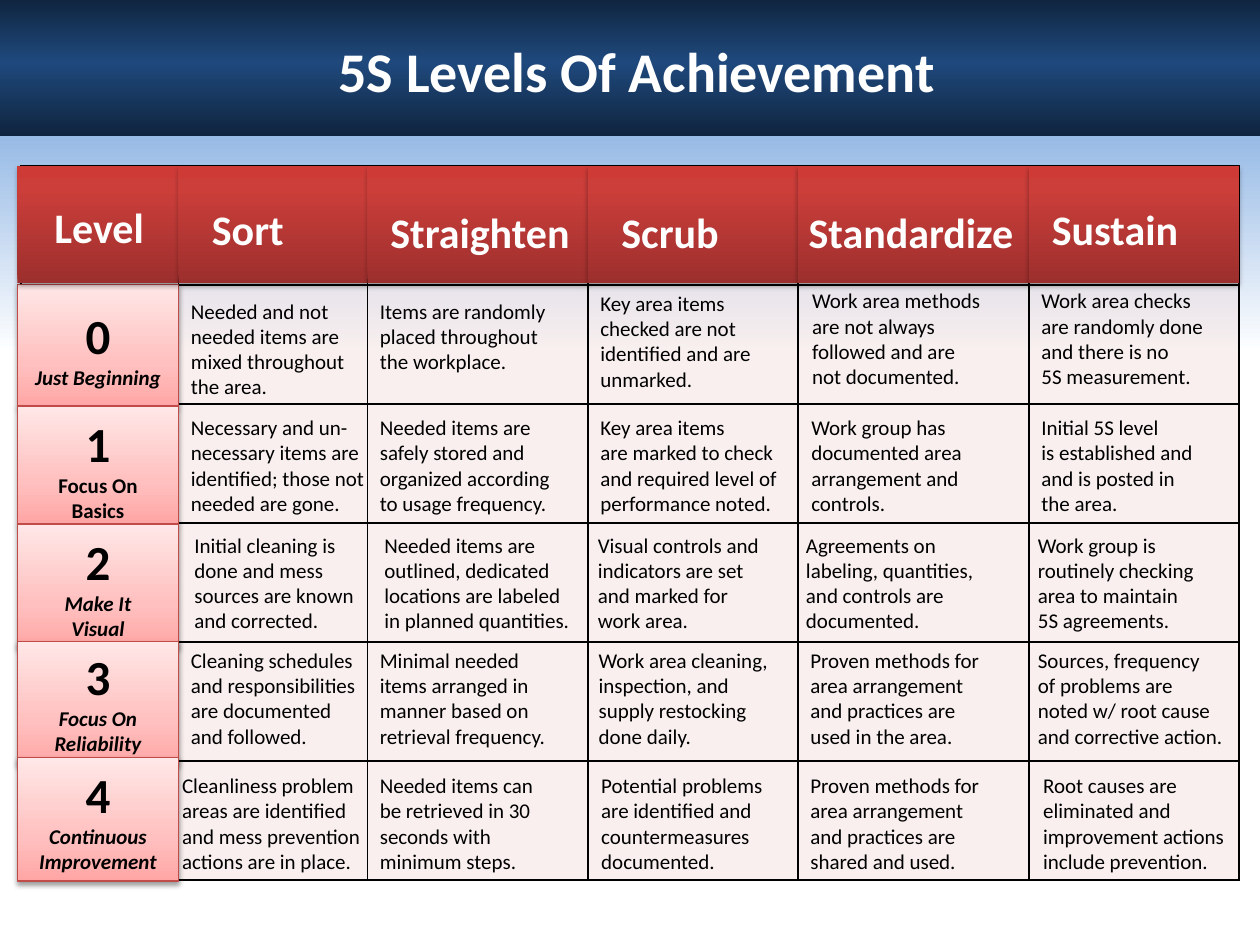
from itertools import accumulate
from lxml.etree import SubElement
from pptx import Presentation
from pptx.dml.color import RGBColor
from pptx.enum.shapes import MSO_SHAPE
from pptx.enum.text import MSO_ANCHOR, MSO_AUTO_SIZE, PP_ALIGN
from pptx.oxml import parse_xml
from pptx.oxml.ns import nsdecls, qn
from pptx.util import Pt

FONT = "Calibri"
COLS = [90, 108, 126, 120, 132, 120]
ROW = 68
EDGES = [0, *accumulate(COLS)]
RED = [(0, "9C2F2D"), (80, "CB3E3A"), (100, "CE3B37")]
PINK = [(0, "FFA6A5"), (35, "FFC0BF"), (100, "FFE7E7")]
SKY = [(0, "8EB4E3"), (29, "FFFFFF"), (100, "FFFFFF")]
NAVY = [(0, "0F243E"), (46, "1F497D"), (100, "0F243E")]

# Heading: text, left and top within its column, width
HEADS = [
    ("Level", 12, 16.5, 66), ("Sort", 12, 18, 56),
    ("Straighten", 6, 19.5, 118), ("Scrub", 12, 19.5, 70.5),
    ("Standardize", -1, 19.5, 133), ("Sustain", 6, 18, 88),
]
# Level: caption, italic, tile top and height, label shift
LEVELS = [
    ("Just Beginning", True, 67.5, 70, 8.5),
    ("Focus On\nBasics", False, 137, 67, 1),
    ("Make It\nVisual", True, 204.5, 70.5, 0.5),
    ("Focus On\nReliability", True, 271.5, 70.5, -0.5),
    ("Continuous\nImprovement", True, 338, 70.5, 0.5),
]
# Note: text, left and top shift, width
NOTES = [
    [("Needed and not\nneeded items are\nmixed throughout\nthe area.", 0, 0, 106.5),
     ("Items are randomly\nplaced throughout\nthe workplace.", 0, 0, 116.5),
     ("Key area items\nchecked are not\nidentified and are\nunmarked.", 0, -4.5, 106),
     ("Work area methods\nare not always\nfollowed and are\nnot documented.", 1, -6, 119),
     ("Work area checks\nare randomly done\nand there is no\n5S measurement.", 0, -6, 114.5)],
    [("Necessary and un-\nnecessary items are\nidentified; those not\nneeded are gone.", 0, 0, 121.5),
     ("Needed items are\nsafely stored and\norganized according\nto usage frequency.", 0, 0, 121.5),
     ("Key area items\nare marked to check\nand required level of\nperformance noted.", 0, 0, 123),
     ("Work group has\ndocumented area\narrangement and\ncontrols.", 0.5, 0, 107),
     ("Initial 5S level\nis established and\nand is posted in\nthe area.", 0, 0, 110)],
    [("Initial cleaning is\ndone and mess\nsources are known\nand corrected.", 2, 0, 115),
     ("Needed items are\noutlined, dedicated\nlocations are labeled\nin planned quantities.", 2.5, 0, 127.5),
     ("Visual controls and\nindicators are set\nand marked for\nwork area.", -1.5, 0, 115),
     ("Agreements on\nlabeling, quantities,\nand controls are\ndocumented.", -2.5, 0, 116.5),
     ("Work group is\nroutinely checking\narea to maintain\n5S agreements.", -2, 0, 110)],
    [("Cleaning schedules\nand responsibilities\nare documented\nand followed.", 0, 0, 119),
     ("Minimal needed\nitems arranged in\nmanner based on\nretrieval frequency.", 0, 0, 116),
     ("Work area cleaning,\ninspection, and\nsupply restocking\ndone daily.", -1, 0, 121),
     ("Proven methods for\narea arrangement\nand practices are\nused in the area.", 0, 0, 119),
     ("Sources, frequency\nof problems are\nnoted w/ root cause\nand corrective action.", -2, 0, 128)],
    [("Cleanliness problem\nareas are identified\nand mess prevention\nactions are in place.", -5, 0, 119),
     ("Needed items can\nbe retrieved in 30\nseconds with\nminimum steps.", 0, 0, 111),
     ("Potential problems\nare identified and\ncountermeasures\ndocumented.", 0.5, 0, 114),
     ("Proven methods for\narea arrangement\nand practices are\nshared and used.", 0, 0, 119),
     ("Root causes are\neliminated and\nimprovement actions\ninclude prevention.", 1, 0, 124.5)],
]
NOTE_TOPS = [72, 138.5, 205.5, 271.5, 343]


def tint(color, code):
    color.rgb = RGBColor.from_string(code)


def panel(slide, x, y, w, h, stops, angle, line=None, shade=0):
    """Add a gradient rectangle; shade is the shadow's opacity in percent."""
    box = slide.shapes.add_shape(MSO_SHAPE.RECTANGLE, Pt(x), Pt(y), Pt(w), Pt(h))
    marks = "".join(f'<a:gs pos="{pos * 1000}"><a:srgbClr val="{code}"/></a:gs>'
                    for pos, code in stops)
    props = box.element.spPr
    props.append(parse_xml(
        f'<a:gradFill {nsdecls("a")} rotWithShape="1"><a:gsLst>{marks}</a:gsLst>'
        f'<a:lin ang="{angle * 60000}" scaled="0"/></a:gradFill>'))
    if line:
        tint(box.line.color, line)
        box.line.width = Pt(0.75)
    else:
        box.line.fill.background()
    box.shadow.inherit = False
    if shade:
        props.find(qn("a:effectLst")).append(parse_xml(
            f'<a:outerShdw {nsdecls("a")} blurRad="{Pt(3.1)}" dist="{Pt(1.8)}" '
            f'dir="5400000" rotWithShape="0"><a:srgbClr val="000000">'
            f'<a:alpha val="{shade * 1000}"/></a:srgbClr></a:outerShdw>'))


def write(para, text, size, code="000000", bold=False, italic=False):
    run = para.add_run()
    run.text = text
    font = run.font
    font.name, font.size = FONT, Pt(size)
    font.bold, font.italic = bold, italic
    tint(font.color, code)


def label(slide, x, y, w, h, lines, align=PP_ALIGN.LEFT, wrap=False):
    """Add a text box; each line is a tuple of arguments for write."""
    box = slide.shapes.add_textbox(Pt(x), Pt(y), Pt(w), Pt(h))
    frame = box.text_frame
    frame.word_wrap = wrap
    frame.auto_size = MSO_AUTO_SIZE.SHAPE_TO_FIT_TEXT
    for i, line in enumerate(lines):
        para = frame.add_paragraph() if i else frame.paragraphs[0]
        para.alignment = align
        write(para, *line)


def banner(slide, x, y, w, h):
    panel(slide, x, y, w, h, NAVY, 90)
    title = slide.shapes.title
    title.left, title.top = Pt(x + 195.5), Pt(y + 26)
    title.width, title.height = Pt(461.5), Pt(34.5)
    title.element.getparent().append(title.element)
    frame = title.text_frame
    frame.margin_left = frame.margin_right = 0
    frame.margin_top = frame.margin_bottom = 0
    frame.vertical_anchor = MSO_ANCHOR.TOP
    frame.word_wrap = True
    frame.auto_size = MSO_AUTO_SIZE.SHAPE_TO_FIT_TEXT
    para = frame.paragraphs[0]
    para.alignment, para.line_spacing = PP_ALIGN.LEFT, 0.9
    write(para, "5S Levels Of Achievement", 32, "FFFFFF", True)


def rule(props, sides):
    """Draw a cell's borders from (side, width) pairs."""
    for i, (side, width) in enumerate(sides):
        props.insert(i, parse_xml(
            f'<a:ln{side} {nsdecls("a")} w="{Pt(width)}"><a:solidFill>'
            f'<a:srgbClr val="000000"/></a:solidFill></a:ln{side}>'))


def grid(slide, x, y):
    count = len(LEVELS) + 1
    table = slide.shapes.add_table(count, len(COLS), Pt(x), Pt(y),
                                   Pt(sum(COLS)), Pt(ROW * count)).table
    table.first_row = table.horz_banding = False
    for row in table.rows:
        row.height = Pt(ROW)
    for c, width in enumerate(COLS):
        table.columns[c].width = Pt(width)
        left, right = (1.5 if edge > 2 else 1 for edge in (c, c + 1))
        for r in range(count):
            cell = table.cell(r, c)
            cell.fill.solid()
            tint(cell.fill.fore_color, "F2DCDB")
            props = cell._tc.get_or_add_tcPr()
            code = props.find(".//" + qn("a:srgbClr"))
            SubElement(code, qn("a:alpha")).set("val", "43000")
            rule(props, [("L", left), ("R", right), ("T", 1), ("B", 1)])


def levels(slide, x, y, w):
    for i, (text, slant, top, high, shift) in enumerate(LEVELS):
        panel(slide, x, y + top, w, high, PINK, 270, "BF4C48", 38)
        lines = [(str(i), 28, "000000", True)]
        lines += [(part, 12, "000000", True, slant) for part in text.split("\n")]
        label(slide, x, y + top + shift, w, high, lines, PP_ALIGN.CENTER, True)


def heads(slide, x, y, h):
    for i, (text, dx, dy, wide) in enumerate(HEADS):
        left = x + EDGES[i]
        lap = 0 if i else 2
        panel(slide, left - lap, y, COLS[i] + lap, h, RED, 270, shade=35)
        label(slide, left + dx, y + dy, wide, 36, [(text, 24, "FFFFFF", True)])


def notes(slide, x, y):
    for top, row in zip(NOTE_TOPS, NOTES):
        for edge, (text, dx, dy, wide) in zip(EDGES[1:], row):
            lines = [(part, 12) for part in text.split("\n")]
            label(slide, x + edge + dx, y + top + dy, wide,
                  7.2 + 14.4 * len(lines), lines)


def main():
    deck = Presentation()
    deck.slide_width, deck.slide_height = Pt(720), Pt(540)
    slide = deck.slides.add_slide(deck.slide_layouts[5])
    x, y = 12, 95
    panel(slide, -1, 66, 722, 471, SKY, 90)
    banner(slide, -2, -1, 723, 79)
    grid(slide, x, y)
    levels(slide, x - 2, y, COLS[0] + 2)
    heads(slide, x, y, 67)
    notes(slide, x, y)
    deck.save("out.pptx")


if __name__ == "__main__":
    main()
